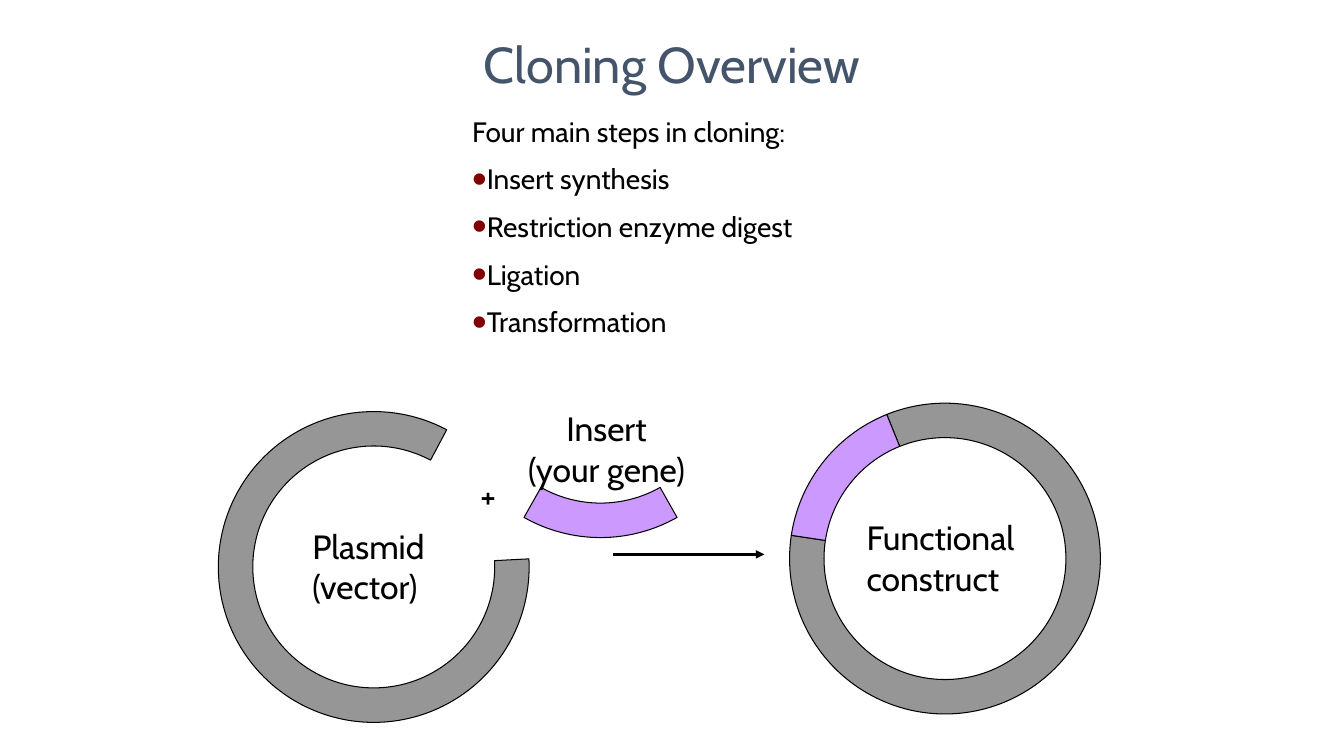
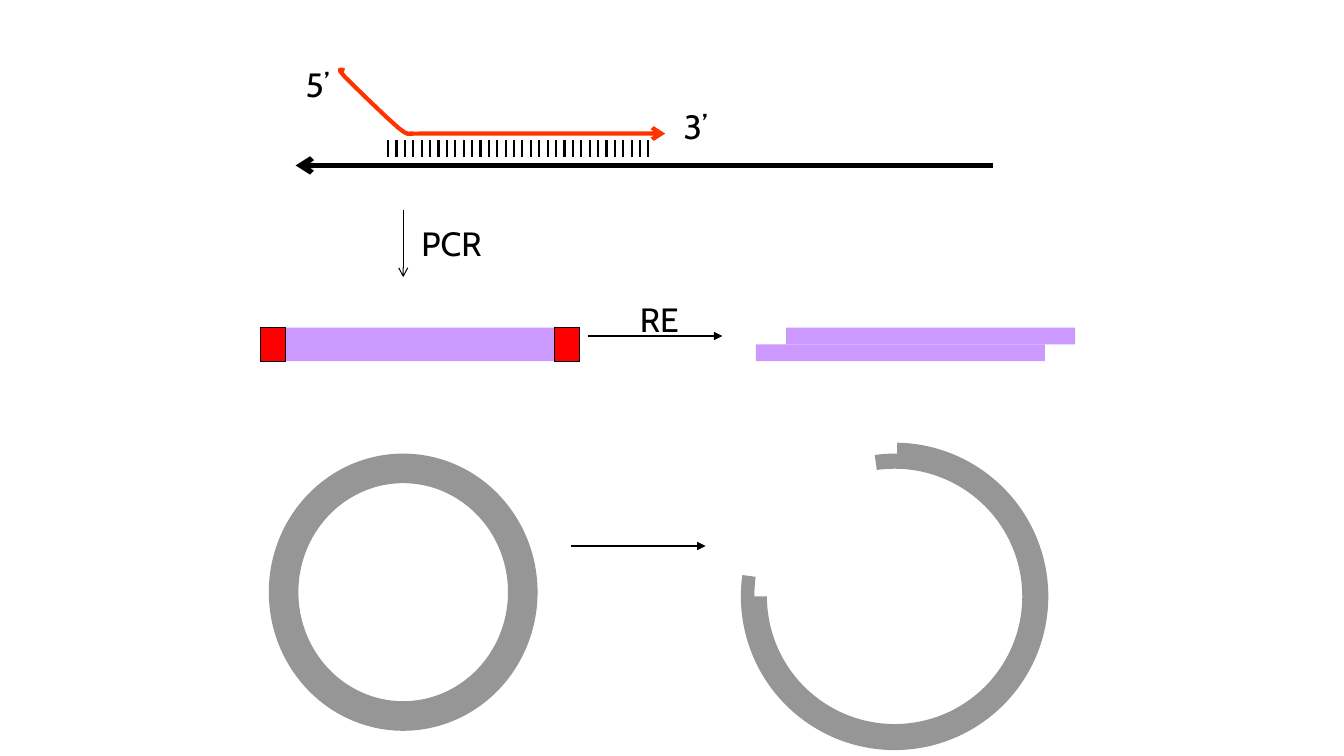
from lxml import etree
from pptx import Presentation
from pptx.dml.color import RGBColor
from pptx.enum.shapes import MSO_CONNECTOR, MSO_SHAPE
from pptx.enum.text import MSO_ANCHOR, MSO_AUTO_SIZE, PP_ALIGN
from pptx.oxml.ns import qn
from pptx.util import Inches, Pt

RECT, DONUT, ARC = MSO_SHAPE.RECTANGLE, MSO_SHAPE.DONUT, MSO_SHAPE.BLOCK_ARC
STRAIGHT = MSO_CONNECTOR.STRAIGHT
LEFT, MID = PP_ALIGN.LEFT, PP_ALIGN.CENTER
TOP, CENTRE = MSO_ANCHOR.TOP, MSO_ANCHOR.MIDDLE
FIXED = MSO_AUTO_SIZE.NONE

FONT = "Cabin"
COLS, ROWS = 160, 90
CELL = Inches(7.5) / ROWS
HUES = {
    "ink": "000000", "title": "44546A", "dot": "800000", "dna": "969696",
    "gene": "CC99FF", "primer": "FF3300", "site": "FF0000",
}
STEPS = ["Insert synthesis", "Restriction enzyme digest", "Ligation",
         "Transformation"]


def cells(*vals):
    """Turn grid cells into whole EMU lengths."""
    return [round(val * CELL) for val in vals]


def hue(name):
    """Look up a named colour."""
    return RGBColor.from_string(HUES[name])


def paint(shape, fill=None, line=None, width=0.75):
    """Set the fill and outline of a shape."""
    shape.shadow.inherit = False
    if fill:
        shape.fill.solid()
        shape.fill.fore_color.rgb = hue(fill)
    else:
        shape.fill.background()
    if line:
        shape.line.color.rgb = hue(line)
        shape.line.width = Pt(width)
    else:
        shape.line.fill.background()


def style(frame, size, tint="ink", align=LEFT):
    """Format every run of a text frame."""
    for para in frame.paragraphs:
        para.alignment = align
        for run in para.runs:
            run.font.name = FONT
            run.font.size = Pt(size)
            run.font.color.rgb = hue(tint)


def label(slide, box, text, align=LEFT):
    """Write a plain label in a box."""
    frame = slide.shapes.add_textbox(*cells(*box)).text_frame
    frame.text = text
    frame.word_wrap = False
    style(frame, 24, align=align)


def tip(shape, end, kind):
    """Put an arrowhead on one end of a line."""
    line = shape._element.spPr.find(qn("a:ln"))
    etree.SubElement(line, qn("a:" + end), type=kind)


def rule(slide, start, stop, width, end=None, kind="triangle"):
    """Draw a straight line, with an arrowhead if asked."""
    line = slide.shapes.add_connector(STRAIGHT, *cells(*start, *stop))
    line.line.color.rgb = hue("ink")
    line.line.width = Pt(width)
    if end:
        tip(line, end, kind)
    etree.SubElement(line._element.spPr, qn("a:effectLst"))


def arc(slide, mid, rad, thick, start, stop, fill, line=None):
    """Draw a band of a ring clockwise between two angles."""
    box = cells(mid[0] - rad, mid[1] - rad, 2 * rad, 2 * rad)
    band = slide.shapes.add_shape(ARC, *box)
    band.adjustments[0] = start % 360 * 0.6
    band.adjustments[1] = stop % 360 * 0.6
    band.adjustments[2] = thick / (2 * rad)
    paint(band, fill, line)


def bar(slide, box, fill, line=None):
    """Draw a filled bar."""
    paint(slide.shapes.add_shape(RECT, *cells(*box)), fill, line)


def place(holder, box, anchor):
    """Move a placeholder and return its text frame."""
    holder.left, holder.top, holder.width, holder.height = cells(*box)
    frame = holder.text_frame
    frame.auto_size = FIXED
    frame.vertical_anchor = anchor
    return frame


def heading(slide, box, text):
    """Fill the title placeholder."""
    frame = place(slide.shapes.title, box, CENTRE)
    frame.text = text
    style(frame, 36, "title", MID)


def steps(slide, box, lead, items):
    """Fill the body placeholder with a lead line and bullets."""
    frame = place(slide.placeholders[1], box, TOP)
    frame.text = "\n".join([lead] + items)
    for num, para in enumerate(frame.paragraphs):
        props = para._p.get_or_add_pPr()
        props.set("marL", "0")
        props.set("indent", "0")
        para.space_before = Pt(10 if num else 0)
        if num:
            tint = etree.SubElement(props, qn("a:buClr"))
            etree.SubElement(tint, qn("a:srgbClr"), val=HUES["dot"])
            etree.SubElement(props, qn("a:buSzPct"), val="150000")
            etree.SubElement(props, qn("a:buChar"), char="•")
        else:
            etree.SubElement(props, qn("a:buNone"))
    style(frame, 20)


def ring(slide, box, parts, text, spot, align=LEFT):
    """Draw outlined ring parts in a square box, with a label."""
    x, y, size = box
    rad = size / 2
    for start, stop, fill in parts:
        arc(slide, (x + rad, y + rad), rad, 4.1, start, stop, fill, "ink")
    left, top, wide, high = spot
    label(slide, (x + left, y + top, wide, high), text, align)


def bend(knots, t):
    """Find the point at share t of a cubic curve."""
    mix = [(1 - t) ** 3, 3 * t * (1 - t) ** 2, 3 * t * t * (1 - t), t ** 3]
    return [sum(m * knot[axis] for m, knot in zip(mix, knots))
            for axis in (0, 1)]


def strand(slide, x, y):
    """Draw the bent primer with its arrowhead."""
    curve = [(44, 8.9), (32.4, 8.9), (20.9, 8.9), (15.9, 8.9), (10.9, 8.9),
             (14.6, 9), (14, 8.9), (13.4, 8.8), (13.5, 9.3), (12.2, 8.2),
             (10.9, 7.1), (6.9, 3.2), (5.8, 2.1), (4.8, 1), (5.4, 1.3),
             (5.8, 1.4)]
    spots = [curve[0]] + [bend(curve[num:num + 4], part / 4)
                          for num in range(0, len(curve) - 1, 3)
                          for part in range(1, 5)]
    spots = [cells(x + a, y + b) for a, b in spots]
    pen = slide.shapes.build_freeform(*spots[0], scale=1.0)
    pen.add_line_segments(spots[1:], close=False)
    shape = pen.convert_to_shape()
    paint(shape, line="primer", width=3)
    tip(shape, "headEnd", "arrow")


def primer(slide, box):
    """Draw the primer paired with its template strand."""
    x, y, wide, high = box
    base = y + high
    rule(slide, (x, base), (x + wide, base), 3.75, "headEnd", "arrow")
    for num in range(32):
        left = x + 11 + num
        rule(slide, (left, base - 3), (left, base - 1), 1.5)
    strand(slide, x, y)
    label(slide, (x, y, 6, 6), "5’")
    label(slide, (x + 45, y + 5, 6, 6), "3’")


def digest(slide, box):
    """Draw the PCR product and its sticky-ended cut."""
    x, y, wide, high = box
    bar(slide, (x, y, 38, high), "gene")
    for left in (x, x + 35):
        bar(slide, (left, y, 3, high), "site", "ink")
    half, long = high / 2, 34.4
    bar(slide, (x + wide - long, y, long, half), "gene")
    bar(slide, (x + wide - long - 3.6, y + half, long, half), "gene")
    rule(slide, (x + 39, y + 1), (x + 55, y + 1), 2, "tailEnd")
    label(slide, (x + 44, y - 4, 7.2, 6), "RE")


def vector(slide, box):
    """Draw the whole plasmid and the cut one."""
    x, y, wide, high = box
    whole = slide.shapes.add_shape(DONUT, *cells(x, y + 1, 32, 33))
    whole.adjustments[0] = 0.11
    paint(whole, "dna")
    rule(slide, (x + 36, y + 12), (x + 52, y + 12), 2, "tailEnd")
    mid = (x + wide - 18.5, y + high / 2)
    arc(slide, mid, 17, 1.8, 262, 540, "dna")
    arc(slide, mid, 18.3, 1.6, 271, 548, "dna")


def overview(slide):
    """Build the cloning overview."""
    heading(slide, (29, 0, 102, 15), "Cloning Overview")
    steps(slide, (55, 13, 54, 29), "Four main steps in cloning:", STEPS)
    rule(slide, (73, 66), (91, 66), 2, "tailEnd")
    ring(slide, (94, 48, 37), [(248, 548.6, "dna"), (188.6, 248, "gene")],
         "Functional\nconstruct", (8, 13, 20.6, 11))
    ring(slide, (26, 49, 37), [(-3, 298, "dna")],
         "Plasmid\n(vector)", (10, 13, 16.6, 11))
    ring(slide, (53, 27, 37), [(60.5, 119.5, "gene")],
         "Insert\n(your gene)", (7.5, 21, 23.4, 11), MID)
    label(slide, (56, 56, 5.4, 6), "+")


def cutting(slide):
    """Build the PCR and digest scheme."""
    slide.shapes.title.element.getparent().remove(slide.shapes.title.element) \
        if slide.shapes.title is not None else None
    vector(slide, (32, 53, 93, 36))
    digest(slide, (31, 39, 97, 4))
    primer(slide, (35.2, 7, 83, 12.7))
    rule(slide, (48, 25), (48, 33), 0.75, "tailEnd", "arrow")
    label(slide, (49, 26, 9.6, 6), "PCR")


def main():
    """Build and save the slides."""
    deck = Presentation()
    deck.slide_width, deck.slide_height = cells(COLS, ROWS)
    for layout, build in ((1, overview), (6, cutting)):
        build(deck.slides.add_slide(deck.slide_layouts[layout]))
    deck.save("out.pptx")


if __name__ == "__main__":
    main()
